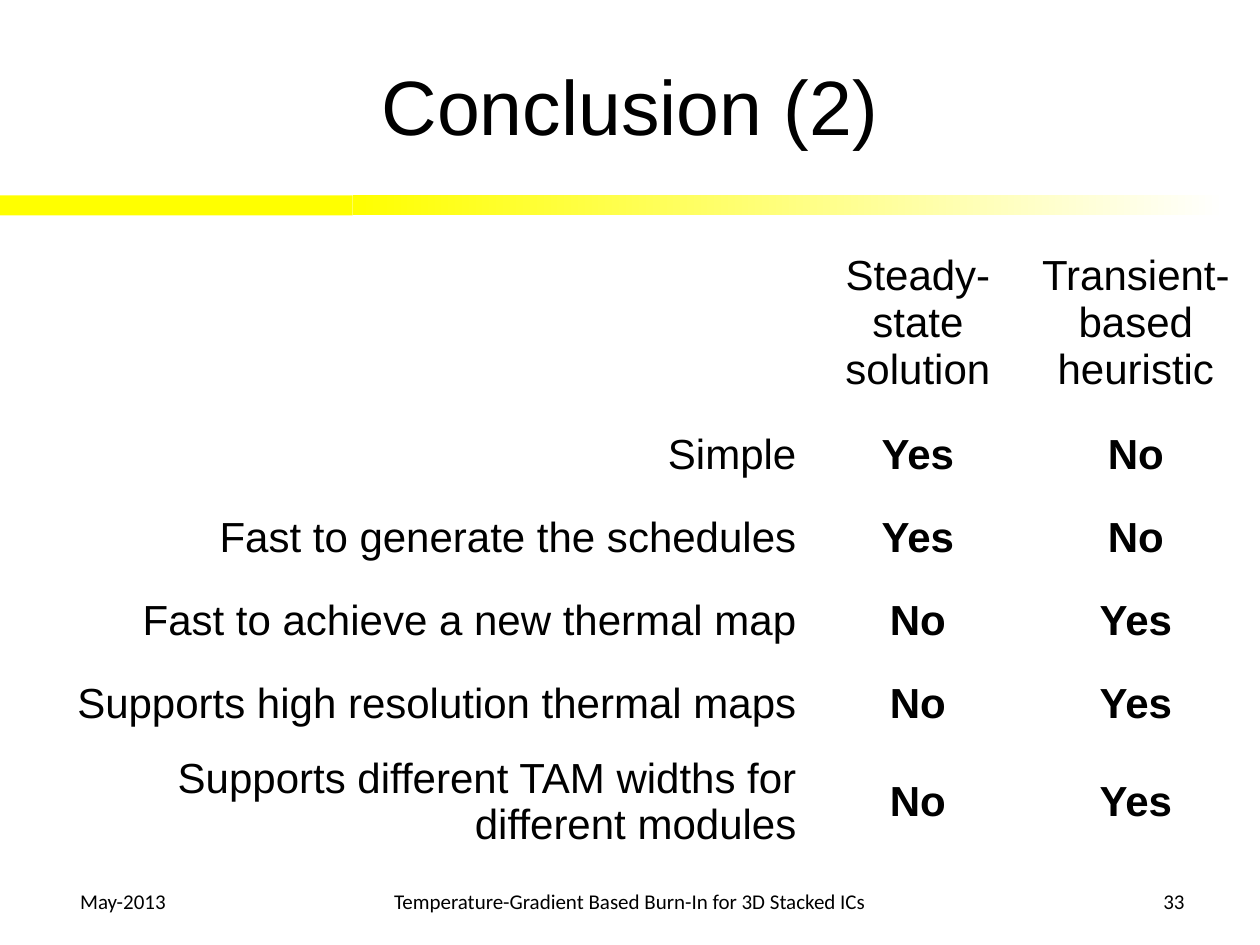
import pptx
import pptx.util
import pptx.dml.color
import pptx.enum.shapes
import pptx.enum.text

Inches = pptx.util.Inches
ALIGN = pptx.enum.text.PP_ALIGN
MIDDLE = pptx.enum.text.MSO_ANCHOR.MIDDLE

# Content
TITLE = "Conclusion (2)"
HEADER = ("", "Steady-state solution", "Transient-based heuristic")
CRITERIA = [
    ("Simple", "Yes", "No"),
    ("Fast to generate the schedules", "Yes", "No"),
    ("Fast to achieve a new thermal map", "No", "Yes"),
    ("Supports high resolution thermal maps", "No", "Yes"),
    ("Supports different TAM widths for different modules", "No", "Yes"),
]
FOOTER = [  # text, width, alignment
    (" May-2013", 1.19, ALIGN.LEFT),
    ("Temperature-Gradient Based Burn-In for 3D Stacked ICs", 6.46, ALIGN.CENTER),
    ("33", 1.19, ALIGN.RIGHT),
]

# Layout in inches
WIDTH, HEIGHT = 10, 7.5
MARGIN = 0.05 * WIDTH
BAND_TOP, BAND_HEIGHT = 1.55, 0.16
BAND_SOLID, BAND_FADE = 2.8, 6.93
TABLE_LEFT, TABLE_TOP = 0.2, 1.85
COLUMNS = [6.22, 1.73, 1.73]
ROWS = [1.43] + [0.66] * 4 + [0.89]
FOOTER_TOP, FOOTER_HEIGHT = 6.95, 0.4
BLACK, WHITE, YELLOW = "000000", "FFFFFF", "FFFF00"


def color(value):
    return pptx.dml.color.RGBColor.from_string(value)


def write(frame, text, size, font, alignment, bold=False):
    frame.word_wrap = True
    paragraph = frame.paragraphs[0]
    paragraph.alignment = alignment
    run = paragraph.add_run()
    run.text = text
    run.font.size = pptx.util.Pt(size)
    run.font.name = font
    run.font.bold = bold
    run.font.color.rgb = color(BLACK)


def add_band(slide, left, width):
    band = slide.shapes.add_shape(
        pptx.enum.shapes.MSO_SHAPE.RECTANGLE,
        Inches(left), Inches(BAND_TOP), Inches(width), Inches(BAND_HEIGHT))
    band.shadow.inherit = False
    band.line.fill.background()
    return band.fill


presentation = pptx.Presentation()
presentation.slide_width = Inches(WIDTH)
presentation.slide_height = Inches(HEIGHT)
slide = presentation.slides.add_slide(presentation.slide_layouts[5])

# Title
title = slide.shapes.title
title.left, title.top = Inches(MARGIN), Inches(0.21)
title.width, title.height = Inches(WIDTH - 2 * MARGIN), Inches(1.25)
title.text_frame.vertical_anchor = MIDDLE
write(title.text_frame, TITLE, 44, "Arial", ALIGN.CENTER)

# Yellow band: a solid part, then a fade to white
solid = add_band(slide, 0, BAND_SOLID)
solid.solid()
solid.fore_color.rgb = color(YELLOW)
fade = add_band(slide, BAND_SOLID, BAND_FADE)
fade.gradient()
fade.gradient_angle = 0
for stop, position, value in zip(fade.gradient_stops, (0, 1), (YELLOW, WHITE)):
    stop.position = position
    stop.color.rgb = color(value)

# Comparison table
table = slide.shapes.add_table(
    len(ROWS), len(COLUMNS), Inches(TABLE_LEFT), Inches(TABLE_TOP),
    Inches(sum(COLUMNS)), Inches(sum(ROWS))).table
table.horz_banding = False
for column, width in zip(table.columns, COLUMNS):
    column.width = Inches(width)
for row, height in zip(table.rows, ROWS):
    row.height = Inches(height)
for row_index, texts in enumerate([HEADER] + CRITERIA):
    for column_index, text in enumerate(texts):
        cell = table.cell(row_index, column_index)
        cell.fill.solid()
        cell.fill.fore_color.rgb = color(WHITE)
        cell.vertical_anchor = MIDDLE
        if text:
            write(cell.text_frame, text, 24, "Arial",
                  ALIGN.CENTER if column_index else ALIGN.RIGHT,
                  bold=row_index > 0 and column_index > 0)

# Footer: three boxes with equal gaps between the margins
gap = (WIDTH - 2 * MARGIN - sum(width for _, width, _ in FOOTER)) / (len(FOOTER) - 1)
left = MARGIN
for text, width, alignment in FOOTER:
    box = slide.shapes.add_textbox(
        Inches(left), Inches(FOOTER_TOP), Inches(width), Inches(FOOTER_HEIGHT))
    box.text_frame.vertical_anchor = MIDDLE
    write(box.text_frame, text, 12, "Calibri", alignment)
    left += width + gap

presentation.save("out.pptx")
